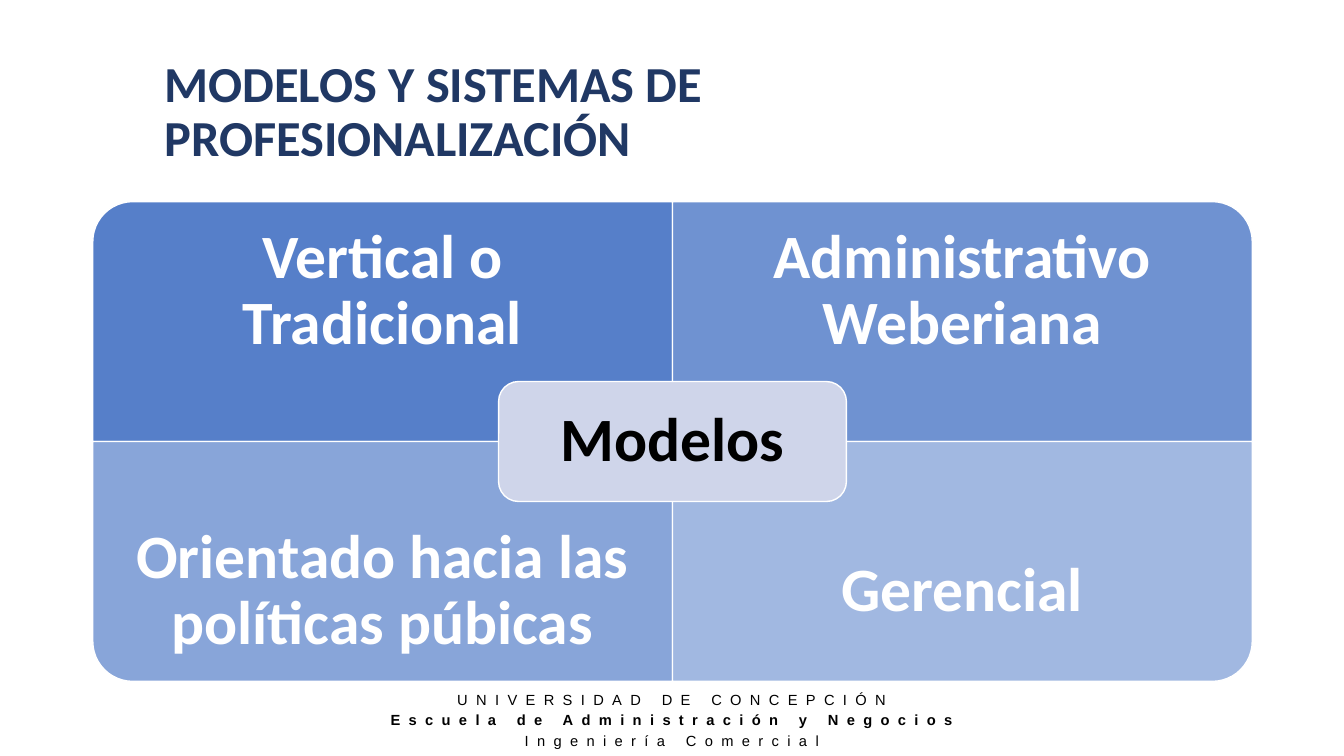
from lxml import etree
from pptx import Presentation
from pptx.dml.color import RGBColor
from pptx.enum.shapes import MSO_SHAPE
from pptx.enum.text import MSO_ANCHOR, MSO_AUTO_SIZE, PP_ALIGN
from pptx.oxml.ns import qn
from pptx.util import Inches, Pt

LEFT, CENTER = PP_ALIGN.LEFT, PP_ALIGN.CENTER
TOP, MIDDLE = MSO_ANCHOR.TOP, MSO_ANCHOR.MIDDLE
ONE_ROUND, ALL_ROUND = MSO_SHAPE.ROUND_1_RECTANGLE, MSO_SHAPE.ROUNDED_RECTANGLE

# Content
TITLE = "MODELOS Y SISTEMAS DE PROFESIONALIZACIÓN"
CORE = "Modelos"
# Label, column, row, rotation, opacity in percent
QUADRANTS = [
    ("Vertical o Tradicional", 0, 0, 270, 90),
    ("Administrativo Weberiana", 1, 0, 0, 77),
    ("Orientado hacia las políticas púbicas", 0, 1, 180, 63),
    ("Gerencial", 1, 1, 90, 50),
]
# Line, bold
FOOTER = [
    ("UNIVERSIDAD DE CONCEPCIÓN", False),
    ("Escuela de Administración y Negocios", True),
    ("Ingeniería Comercial", False),
]

THEME = {
    "navy": RGBColor.from_string("203864"),
    "blue": RGBColor.from_string("4472C4"),
    "pale": RGBColor.from_string("CFD5EA"),
    "white": RGBColor.from_string("FFFFFF"),
    "black": RGBColor.from_string("000000"),
    "title": Pt(36),
    "label": Pt(44),
    "footer": Pt(10.5),
}
TITLE_FONT = {"name": "Calibri", "size": THEME["title"], "bold": True}
LABEL_FONT = {"name": "Calibri", "size": THEME["label"], "bold": True}
FOOTER_FONT = {"name": "Arial", "size": THEME["footer"]}

# Geometry in inches
SLIDE_W, SLIDE_H = 13.33, 7.5
GRID_X, GRID_Y, QUAD_W, QUAD_H = 0.92, 2, 5.75, 2.38
LABEL_H = QUAD_H * 0.75
CORE_W, CORE_H = QUAD_W * 0.6, QUAD_H / 2
CORE_EDGE = 0.06


def set_frame(tf, anchor, inset=None):
    tf.word_wrap = True
    tf.auto_size = MSO_AUTO_SIZE.NONE
    tf.vertical_anchor = anchor
    if inset is not None:
        for side in ("left", "right", "top", "bottom"):
            setattr(tf, f"margin_{side}", Inches(inset))


def write(p, text, fmt, color, align=CENTER, spacing=0.9):
    p.alignment, p.line_spacing = align, spacing
    r = p.add_run()
    r.text = text
    for name, value in fmt.items():
        setattr(r.font, name, value)
    r.font.color.rgb = color
    return r


def add_panel(s, kind, x, y, w, h, color, rotation=0, opacity=100):
    sp = s.shapes.add_shape(kind, Inches(x), Inches(y), Inches(w), Inches(h))
    sp.shadow.inherit = False
    sp.rotation = rotation
    sp.fill.solid()
    sp.fill.fore_color.rgb = color
    sp.line.color.rgb = THEME["white"]
    sp.line.width = Pt(1)
    if opacity < 100:
        clr = sp.fill._xPr.find(qn("a:solidFill"))[0]
        etree.SubElement(clr, qn("a:alpha")).set("val", str(opacity * 1000))


def add_label(s, text, x, y, w, h, inset, color):
    tf = s.shapes.add_textbox(Inches(x), Inches(y), Inches(w), Inches(h)).text_frame
    set_frame(tf, MIDDLE, inset)
    write(tf.paragraphs[0], text, LABEL_FONT, color)


def add_footer(s):
    box = s.shapes.add_textbox(0, Inches(6.78), Inches(SLIDE_W), Inches(0.72))
    tf = box.text_frame
    set_frame(tf, TOP)
    for i, (text, bold) in enumerate(FOOTER):
        p = tf.add_paragraph() if i else tf.paragraphs[0]
        r = write(p, text, {**FOOTER_FONT, "bold": bold}, THEME["black"], spacing=1.15)
        r.font._element.set("spc", "600")


def add_title(s):
    sp = s.shapes.title
    sp.left, sp.top = Inches(1.53), Inches(0.4)
    sp.width, sp.height = Inches(9.97), Inches(1.45)
    set_frame(sp.text_frame, MIDDLE)
    write(sp.text_frame.paragraphs[0], TITLE, TITLE_FONT, THEME["navy"], LEFT)


def add_matrix(s):
    # Quadrants, each turned so that its round corner faces outward
    for text, col, row, rotation, opacity in QUADRANTS:
        x, y = GRID_X + col * QUAD_W, GRID_Y + row * QUAD_H
        w, h = (QUAD_H, QUAD_W) if rotation % 180 else (QUAD_W, QUAD_H)
        add_panel(s, ONE_ROUND, x + (QUAD_W - w) / 2, y + (QUAD_H - h) / 2, w, h,
                  THEME["blue"], rotation, opacity)
        label_y = y + row * (QUAD_H - LABEL_H)
        add_label(s, text, x, label_y, QUAD_W, LABEL_H, 0.34, THEME["white"])
    # Core panel centred on the crossing
    x, y = GRID_X + QUAD_W - CORE_W / 2, GRID_Y + QUAD_H - CORE_H / 2
    add_panel(s, ALL_ROUND, x, y, CORE_W, CORE_H, THEME["pale"])
    add_label(s, CORE, x + CORE_EDGE, y + CORE_EDGE, CORE_W - 2 * CORE_EDGE,
              CORE_H - 2 * CORE_EDGE, 0.18, THEME["black"])


def main():
    prs = Presentation()
    prs.slide_width, prs.slide_height = Inches(SLIDE_W), Inches(SLIDE_H)
    s = prs.slides.add_slide(prs.slide_layouts[5])
    add_footer(s)
    add_title(s)
    add_matrix(s)
    prs.save("out.pptx")


if __name__ == "__main__":
    main()
